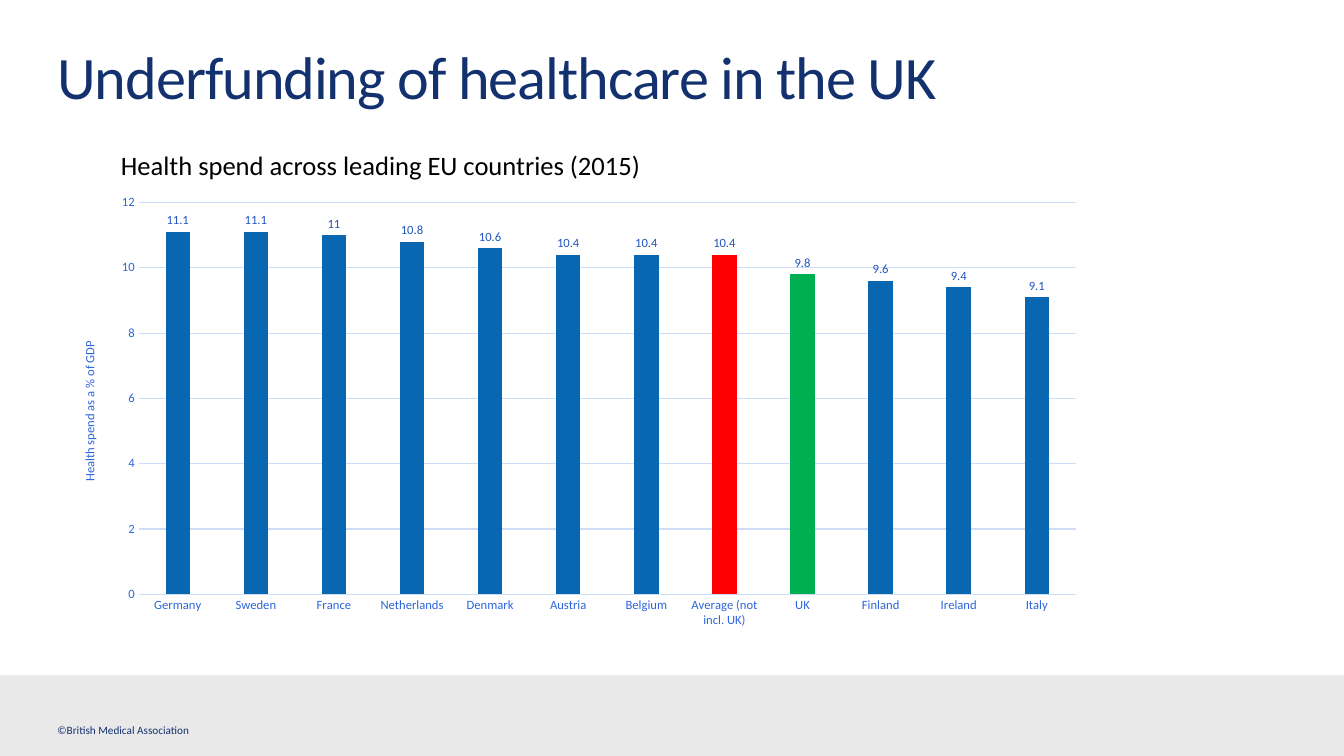
from lxml import etree
from pptx import Presentation
from pptx.chart.data import CategoryChartData
from pptx.dml.color import RGBColor
from pptx.enum import chart as ch, shapes, text
from pptx.oxml.ns import qn
from pptx.util import Pt

FONT = "Calibri"
NAVY = RGBColor(0x13, 0x31, 0x6E)
BLACK = RGBColor(0x00, 0x00, 0x00)
GREY = RGBColor(0xE9, 0xE9, 0xE9)
BAR_BLUE = RGBColor(0x09, 0x67, 0xB1)
AVERAGE_RED = RGBColor(0xFF, 0x00, 0x00)
UK_GREEN = RGBColor(0x00, 0xB0, 0x50)
AXIS_BLUE = RGBColor(0x2C, 0x65, 0xDB)
LABEL_BLUE = RGBColor(0x21, 0x55, 0xBF)
GRID_BLUE = RGBColor(0xCE, 0xDC, 0xF7)

HEALTH_SPEND = {
    "Germany": 11.1, "Sweden": 11.1, "France": 11, "Netherlands": 10.8,
    "Denmark": 10.6, "Austria": 10.4, "Belgium": 10.4,
    "Average (not incl. UK)": 10.4, "UK": 9.8, "Finland": 9.6,
    "Ireland": 9.4, "Italy": 9.1,
}
HIGHLIGHTS = {"Average (not incl. UK)": AVERAGE_RED, "UK": UK_GREEN}
PLOT_LAYOUT = {"x": 0.08, "y": 0.04, "w": 0.9, "h": 0.87}


def style_font(font, size, color):
    font.name, font.size, font.bold = FONT, Pt(size), False
    font.color.rgb = color


def style_line(line):
    line.color.rgb = GRID_BLUE
    line.width = Pt(0.75)


def add_text(slide, box, content, size, color, anchor=text.MSO_ANCHOR.TOP):
    tf = slide.shapes.add_textbox(*map(Pt, box)).text_frame
    tf.word_wrap = True
    tf.vertical_anchor = anchor
    tf.margin_left = tf.margin_right = tf.margin_top = tf.margin_bottom = 0
    p = tf.paragraphs[0]
    p.text = content
    style_font(p.runs[0].font, size, color)
    return p


def add_footer(slide, left, top, width, height):
    sp = slide.shapes.add_shape(
        shapes.MSO_SHAPE.RECTANGLE, Pt(left), Pt(top), Pt(width), Pt(height))
    sp.shadow.inherit = False
    sp.fill.solid()
    sp.fill.fore_color.rgb = GREY
    sp.line.fill.background()
    add_text(slide, (left + 41, top + 34, 200, 9.5),
             "©British Medical Association", 8, NAVY, text.MSO_ANCHOR.MIDDLE)


def add_title(slide, box):
    p = add_text(slide, box, "Underfunding of healthcare in the UK", 43, NAVY)
    p.line_spacing = Pt(45.3)
    p.runs[0].font._element.set("spc", "-70")


def set_plot_layout(chart):
    plot_area = chart._chartSpace.chart.plotArea
    for old in plot_area.findall(qn("c:layout")):
        plot_area.remove(old)
    layout = etree.Element(qn("c:layout"))
    manual = etree.SubElement(layout, qn("c:manualLayout"))
    settings = {"layoutTarget": "inner", "xMode": "edge", "yMode": "edge"}
    for name, value in {**settings, **PLOT_LAYOUT}.items():
        etree.SubElement(manual, qn("c:" + name)).set("val", str(value))
    plot_area.insert(0, layout)


def add_spend_chart(slide, left, top, width, height):
    # Heading above the chart
    add_text(slide, (left + 46.8, top - 25.2, 478, 23),
             "Health spend across leading EU countries (2015)", 19, BLACK)

    data = CategoryChartData()
    data.categories = list(HEALTH_SPEND)
    data.add_series("Series 1", list(HEALTH_SPEND.values()))
    chart = slide.shapes.add_chart(
        ch.XL_CHART_TYPE.COLUMN_CLUSTERED,
        Pt(left), Pt(top), Pt(width), Pt(height), data).chart
    chart.has_title = chart.has_legend = False
    style_font(chart.font, 10, NAVY)
    set_plot_layout(chart)

    # Columns and value labels
    plot = chart.plots[0]
    plot.gap_width, plot.overlap = 219, -27
    plot.vary_by_categories = False
    series = plot.series[0]
    series.format.fill.solid()
    series.format.fill.fore_color.rgb = BAR_BLUE
    for i, country in enumerate(HEALTH_SPEND):
        if country in HIGHLIGHTS:
            fill = series.points[i].format.fill
            fill.solid()
            fill.fore_color.rgb = HIGHLIGHTS[country]
    labels = series.data_labels
    labels.show_value = True
    labels.position = ch.XL_LABEL_POSITION.OUTSIDE_END
    style_font(labels.font, 9, LABEL_BLUE)

    # Axes
    for axis in (chart.category_axis, chart.value_axis):
        axis.major_tick_mark = axis.minor_tick_mark = ch.XL_TICK_MARK.NONE
        style_font(axis.tick_labels.font, 9, AXIS_BLUE)
    style_line(chart.category_axis.format.line)
    values = chart.value_axis
    values.minimum_scale, values.maximum_scale, values.major_unit = 0, 12, 2
    values.format.line.fill.background()
    style_line(values.major_gridlines.format.line)
    tf = values.axis_title.text_frame
    tf.text = "Health spend as a % of GDP"
    style_font(tf.paragraphs[0].runs[0].font, 9, AXIS_BLUE)


def main():
    prs = Presentation()
    prs.slide_width, prs.slide_height = Pt(960), Pt(540)
    slide = prs.slides.add_slide(prs.slide_layouts[6])
    add_footer(slide, 0, 482.4, 960, 57.6)
    add_title(slide, (41, 34.5, 742, 52))
    add_spend_chart(slide, 39.6, 131.8, 743.8, 321.8)
    prs.save("out.pptx")


if __name__ == "__main__":
    main()
